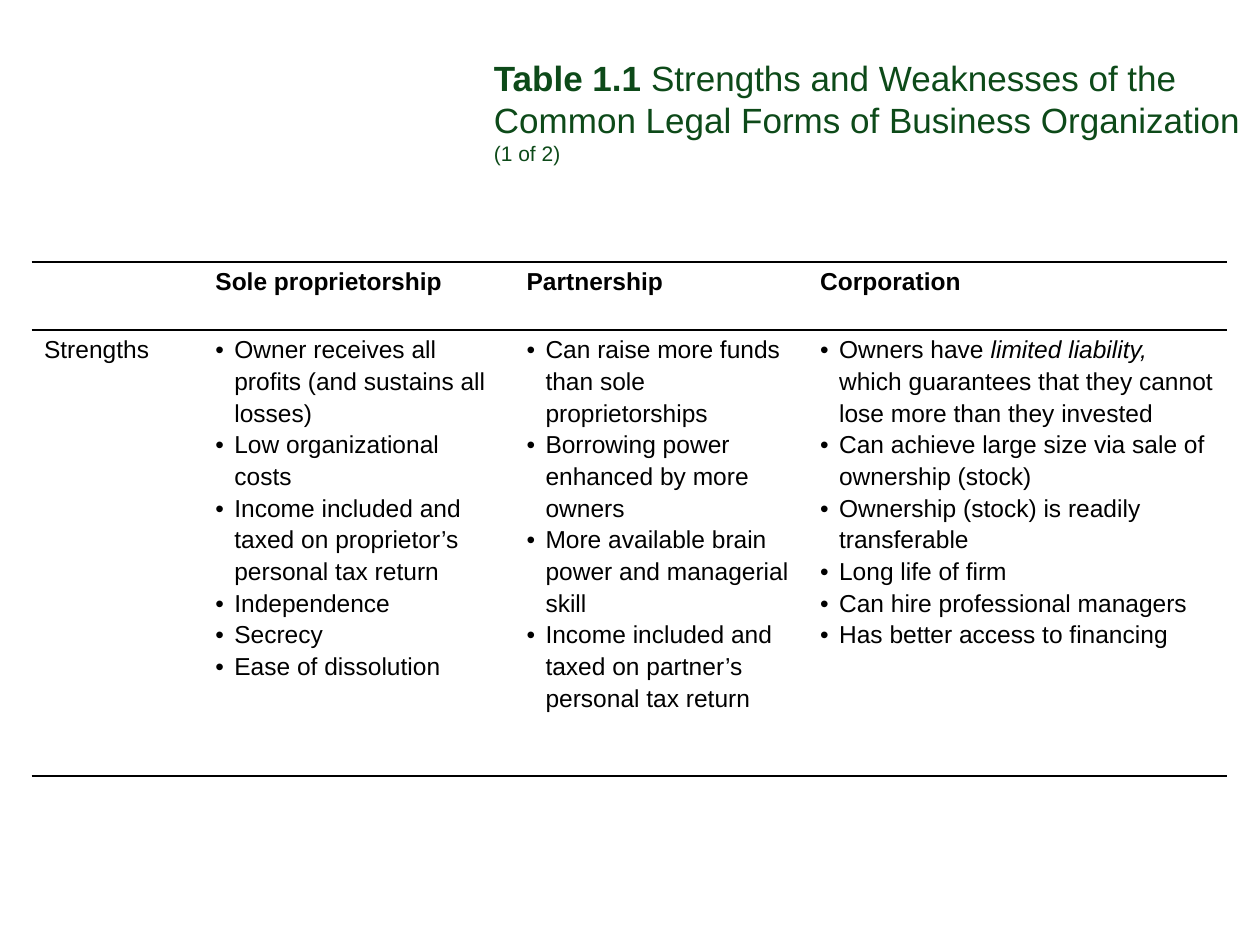
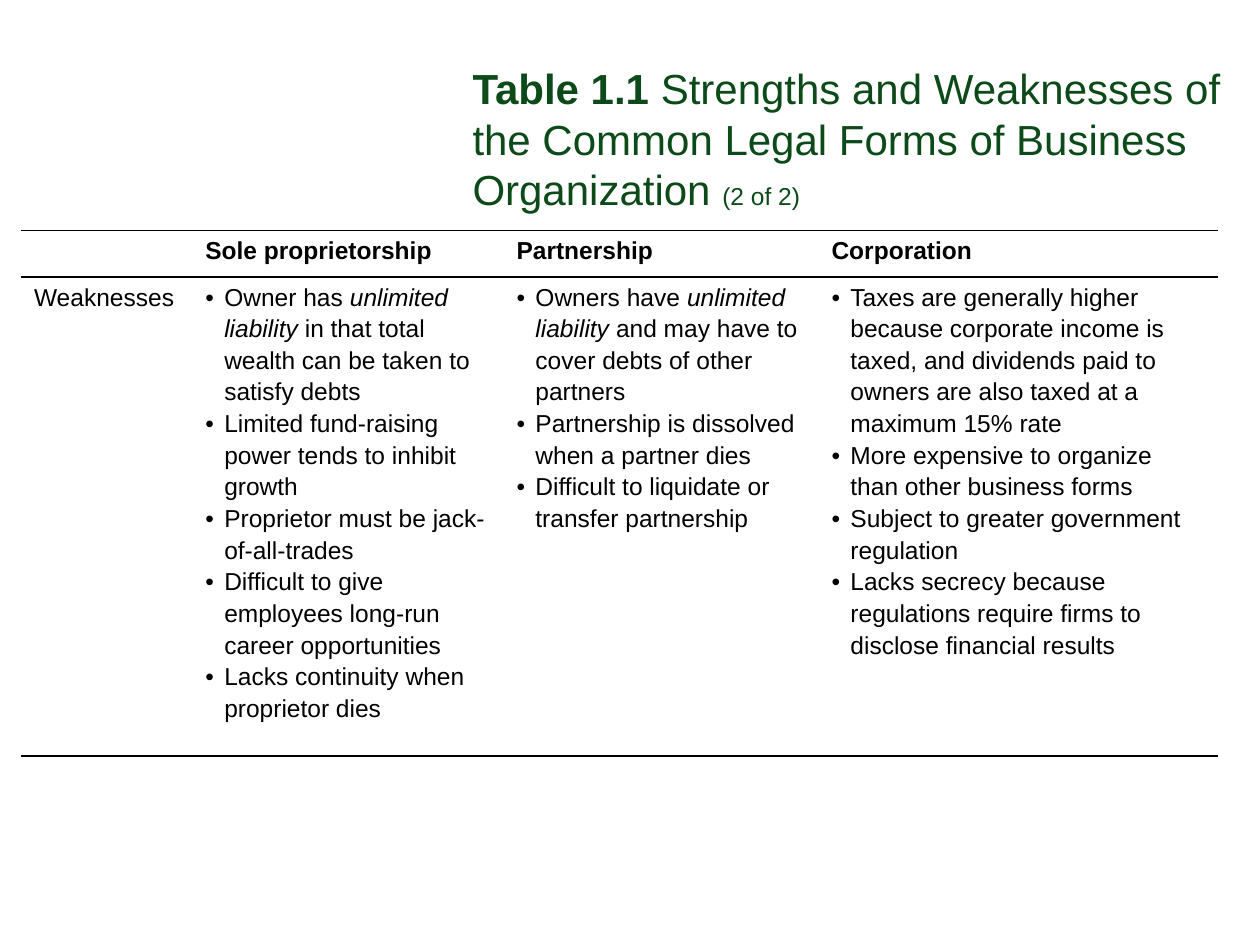
from dataclasses import dataclass

from lxml import etree
from pptx import Presentation
from pptx.dml.color import RGBColor
from pptx.enum.text import MSO_ANCHOR
from pptx.oxml.ns import qn
from pptx.util import Inches, Pt

# Shared style
FONT = "Arial"
GREEN = "0D4A19"
BLACK = "000000"
BODY_SIZE = 14
HEADERS = ["", "Sole proprietorship", "Partnership", "Corporation"]
TITLE_LABEL = "Table 1.1"
TITLE_TEXT = " Strengths and Weaknesses of the Common Legal Forms of Business Organization "


@dataclass
class TableSlide:
    """One part of the table; asterisks in the items enclose italic words."""
    page_label: str
    title_box: tuple[float, float, float, float]
    title_size: int
    page_label_size: int
    table_left: float
    table_top: float
    column_widths: list[float]
    row_heights: list[float]
    row_label: str
    item_lists: list[list[str]]


TABLE_SLIDES = [
    TableSlide(
        page_label="(1 of 2)",
        title_box=(3.92, 0.45, 6, 1.76),
        title_size=20,
        page_label_size=12,
        table_left=0.25,
        table_top=2.08,
        column_widths=[1.36, 2.47, 2.33, 3.33],
        row_heights=[0.54, 3.54],
        row_label="Strengths",
        item_lists=[
            [
                "Owner receives all profits (and sustains all losses)",
                "Low organizational costs",
                "Income included and taxed on proprietor’s personal tax return",
                "Independence",
                "Secrecy",
                "Ease of dissolution",
            ],
            [
                "Can raise more funds than sole proprietorships",
                "Borrowing power enhanced by more owners",
                "More available brain power and managerial skill",
                "Income included and taxed on partner’s personal tax return",
            ],
            [
                "Owners have *limited liability, *which guarantees that they "
                "cannot lose more than they invested",
                "Can achieve large size via sale of ownership (stock)",
                "Ownership (stock) is readily transferable",
                "Long life of firm",
                "Can hire professional managers",
                "Has better access to financing",
            ],
        ],
    ),
    TableSlide(
        page_label="(2 of 2)",
        title_box=(3.75, 0.5, 6.08, 1.76),
        title_size=24,
        page_label_size=14,
        table_left=0.17,
        table_top=1.83,
        column_widths=[1.36, 2.47, 2.5, 3.17],
        row_heights=[0.37, 3.8],
        row_label="Weaknesses",
        item_lists=[
            [
                "Owner has *unlimited liability *in that total wealth can be "
                "taken to satisfy debts",
                "Limited fund-raising power tends to inhibit growth",
                "Proprietor must be jack-of-all-trades",
                "Difficult to give employees long-run career opportunities",
                "Lacks continuity when proprietor dies",
            ],
            [
                "Owners have *unlimited liability *and may have to cover debts "
                "of other partners",
                "Partnership is dissolved when a partner dies",
                "Difficult to liquidate or transfer partnership",
            ],
            [
                "Taxes are generally higher because corporate income is taxed, "
                "and dividends paid to owners are also taxed at a maximum 15% rate",
                "More expensive to organize than other business forms",
                "Subject to greater government regulation",
                "Lacks secrecy because regulations require firms to disclose "
                "financial results",
            ],
        ],
    ),
]


def color(hex_string: str) -> RGBColor:
    return RGBColor.from_string(hex_string)


def add_run(paragraph, text: str, size: int, hex_color: str,
            bold: bool = False, italic: bool = False) -> None:
    run = paragraph.add_run()
    run.text = text
    run.font.name = FONT
    run.font.size = Pt(size)
    run.font.color.rgb = color(hex_color)
    run.font.bold = bold
    run.font.italic = italic


def add_title(slide, content: TableSlide) -> None:
    box = slide.shapes.add_textbox(*map(Inches, content.title_box))
    frame = box.text_frame
    frame.word_wrap = True
    frame.vertical_anchor = MSO_ANCHOR.TOP
    frame.margin_left = frame.margin_right = Inches(0)
    frame.margin_top = frame.margin_bottom = Inches(0)
    paragraph = frame.paragraphs[0]
    add_run(paragraph, TITLE_LABEL, content.title_size, GREEN, bold=True)
    add_run(paragraph, TITLE_TEXT, content.title_size, GREEN)
    add_run(paragraph, content.page_label, content.page_label_size, GREEN)


def set_bullet(paragraph) -> None:
    properties = paragraph._p.get_or_add_pPr()
    properties.set("marL", str(Inches(0.15)))
    properties.set("indent", str(-Inches(0.15)))
    etree.SubElement(properties, qn("a:buFont")).set("typeface", FONT)
    etree.SubElement(properties, qn("a:buChar")).set("char", "•")


def set_borders(cell) -> None:
    """Rule the cell above and below, and leave its sides open."""
    properties = cell._tc.get_or_add_tcPr()
    for position, side in enumerate(["lnL", "lnR", "lnT", "lnB"]):
        line = etree.Element(qn(f"a:{side}"))
        if side in ("lnT", "lnB"):
            line.set("w", str(Pt(1)))
            fill = etree.SubElement(line, qn("a:solidFill"))
            etree.SubElement(fill, qn("a:srgbClr")).set("val", BLACK)
        else:
            etree.SubElement(line, qn("a:noFill"))
        properties.insert(position, line)


def fill_cell(cell, texts: list[str], bold: bool = False, bulleted: bool = False) -> None:
    cell.fill.background()
    set_borders(cell)
    cell.margin_left = cell.margin_right = Inches(0.1)
    cell.margin_top = cell.margin_bottom = Inches(0.02)
    cell.vertical_anchor = MSO_ANCHOR.TOP
    frame = cell.text_frame
    for index, text in enumerate(texts):
        paragraph = frame.add_paragraph() if index else frame.paragraphs[0]
        if bulleted:
            set_bullet(paragraph)
        paragraph.line_spacing = 1.15
        for part_index, part in enumerate(text.split("*")):
            if part:
                add_run(paragraph, part, BODY_SIZE, BLACK, bold, part_index % 2 == 1)


def add_comparison_table(slide, content: TableSlide) -> None:
    frame = slide.shapes.add_table(
        len(content.row_heights), len(content.column_widths),
        Inches(content.table_left), Inches(content.table_top),
        Inches(sum(content.column_widths)), Inches(sum(content.row_heights)))
    table = frame.table
    table.first_row = table.horz_banding = False
    for column, width in zip(table.columns, content.column_widths):
        column.width = Inches(width)
    for row, height in zip(table.rows, content.row_heights):
        row.height = Inches(height)

    # Header row, row label and bulleted lists
    for column_index, header in enumerate(HEADERS):
        fill_cell(table.cell(0, column_index), [header], bold=True)
    fill_cell(table.cell(1, 0), [content.row_label])
    for column_index, items in enumerate(content.item_lists, start=1):
        fill_cell(table.cell(1, column_index), items, bulleted=True)


def main() -> None:
    presentation = Presentation()
    presentation.slide_width = Inches(10)
    presentation.slide_height = Inches(7.5)
    blank_layout = presentation.slide_layouts[6]
    for content in TABLE_SLIDES:
        slide = presentation.slides.add_slide(blank_layout)
        add_title(slide, content)
        add_comparison_table(slide, content)
    presentation.save("out.pptx")


if __name__ == "__main__":
    main()
